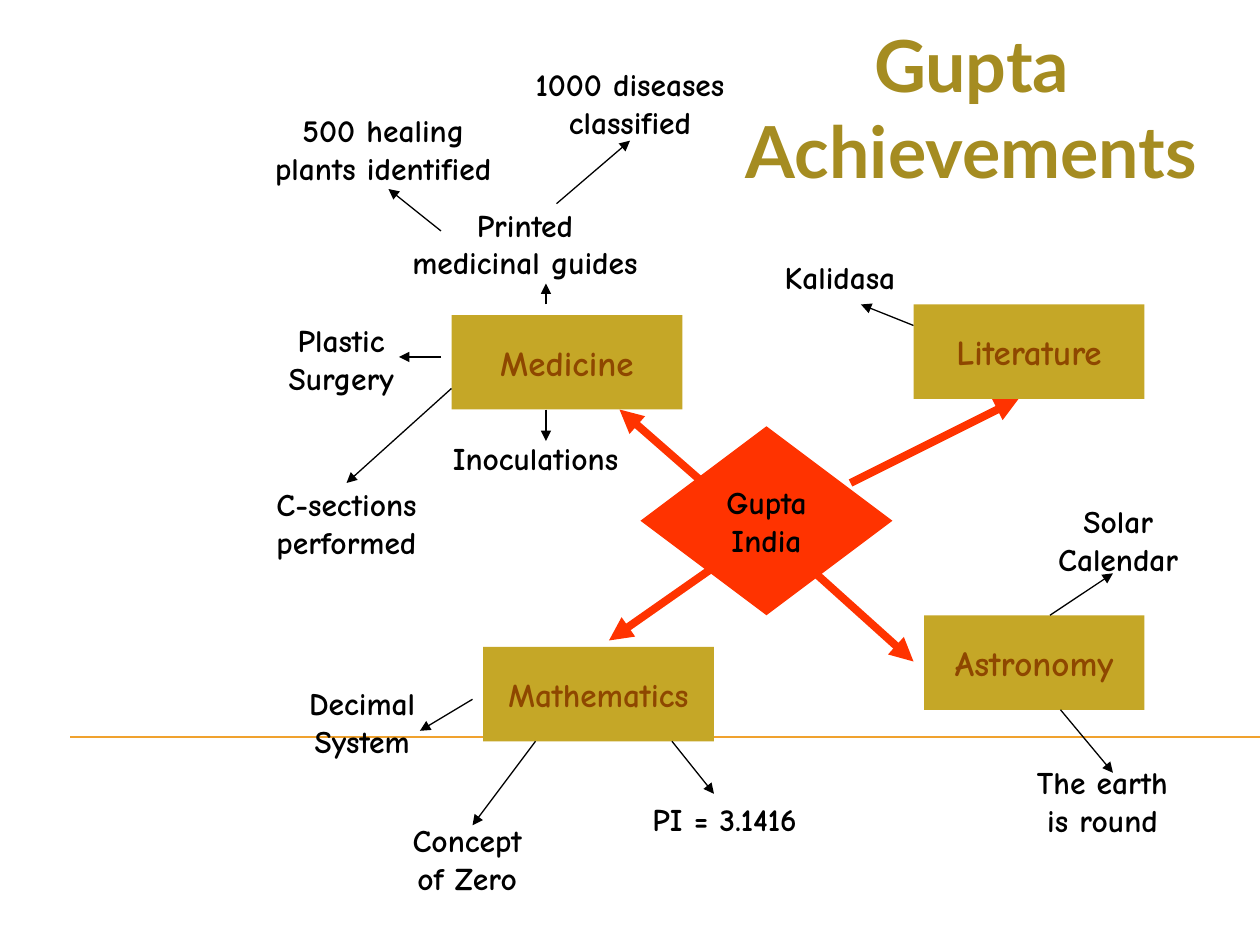
from pptx import Presentation
from pptx.dml.color import RGBColor
from pptx.enum.shapes import MSO_CONNECTOR as Link, MSO_SHAPE as Preset
from pptx.enum.text import MSO_ANCHOR as Anchor, MSO_AUTO_SIZE as Fit, PP_ALIGN as Align
from pptx.oxml.ns import qn
from pptx.util import Inches, Pt
from lxml.etree import SubElement

COLORS = {"gold": "C5A727", "brown": "8E4700", "red": "FF3300",
          "black": "000000", "title": "A58C21", "rule": "F0A22E"}

deck = Presentation()
deck.slide_width, deck.slide_height = Inches(10), Inches(7.5)
page = deck.slides.add_slide(deck.slide_layouts[5])

# The slide is a grid of 120 columns by 90 rows
COLUMN, ROW = deck.slide_width / 120, deck.slide_height / 90


def write(shape, text, color, size, font="Comic Neue", wrap=True, anchor=Anchor.TOP):
    """Put centred bold text in a shape and return its run."""
    frame = shape.text_frame
    frame_format = {"word_wrap": wrap, "vertical_anchor": anchor, "auto_size": Fit.NONE}
    for name, value in frame_format.items():
        setattr(frame, name, value)
    para = frame.paragraphs[0]
    para.text = text
    para.alignment = Align.CENTER
    span_format = {"name": font, "size": Pt(size), "bold": True,
                   "color": RGBColor.from_string(COLORS[color])}
    for span in para.runs:
        for name, value in span_format.items():
            if name == "color":
                span.font.color.rgb = value
            else:
                setattr(span.font, name, value)
    return para.runs[0]


def connect(start_x, start_y, end_x, end_y, color="black", width=0.75, arrow=True):
    """Draw a line between two grid points, with a head at its end."""
    line = page.shapes.add_connector(
        Link.STRAIGHT, int(start_x * COLUMN), int(start_y * ROW),
        int(end_x * COLUMN), int(end_y * ROW))
    line.line.color.rgb = RGBColor.from_string(COLORS[color])
    line.line.width = Pt(width)
    properties = line._element.spPr
    if arrow:
        SubElement(properties.find(qn("a:ln")), qn("a:tailEnd"), type="triangle")
    SubElement(properties, qn("a:effectLst"))


# Title with a hard black text shadow
title = page.shapes.title
title_place = {"left": 67, "top": 1.4, "width": 51.1, "height": 17.8}
for side, cells in title_place.items():
    setattr(title, side, int(cells * (COLUMN if side in ("left", "width") else ROW)))
title_span = write(title, "Gupta Achievements", "title", 41, "Lato")
effects = SubElement(title_span.font._element, qn("a:effectLst"))
shadow = SubElement(effects, qn("a:outerShdw"), dist="35921", dir="2700000")
SubElement(shadow, qn("a:srgbClr"), val=COLORS["black"])
# Effects must come between the fill and the typeface
title_span.font._element.find(qn("a:solidFill")).addnext(effects)

# Horizontal rule
connect(6.7, 70.2, 120, 70.2, "rule", arrow=False)

# Red arrows from the centre to each field
for ends in [(67, 46, 59, 39), (81, 46, 97, 38), (77, 54, 87, 63), (68, 54, 58, 61)]:
    connect(*ends, "red", 4.5)

# Fields and the central diamond: text, preset, left, top, width, height, fill, font
nodes = [
    ("Medicine", Preset.RECTANGLE, 43, 30, 22, 9, "gold", "brown", 20),
    ("Literature", Preset.RECTANGLE, 87, 29, 22, 9, "gold", "brown", 20),
    ("Mathematics", Preset.RECTANGLE, 46, 61.6, 22, 9, "gold", "brown", 19),
    ("Astronomy", Preset.RECTANGLE, 88, 58.6, 21, 9, "gold", "brown", 20),
    ("Gupta\vIndia", Preset.DIAMOND, 61, 40.6, 24, 18, "red", "black", 18),
]
for text, preset, left, top, width, height, fill, color, size in nodes:
    box = page.shapes.add_shape(preset, int(left * COLUMN), int(top * ROW),
                                int(width * COLUMN), int(height * ROW))
    box.shadow.inherit = False
    box.fill.solid()
    box.fill.fore_color.rgb = RGBColor.from_string(COLORS[fill])
    box.line.fill.background()
    write(box, text, color, size, wrap=False, anchor=Anchor.MIDDLE)

# Achievements: text, left, top, width
labels = [
    ("Printed\vmedicinal guides", 35, 19, 30),
    ("1000 diseases\vclassified", 47, 5.6, 26),
    ("Plastic\vSurgery", 24, 30, 17),
    ("C-sections\vperformed", 23, 45.6, 20),
    ("Inoculations", 41, 41.2, 20),
    ("500 healing\vplants identified", 23, 10, 27),
    ("Decimal\vSystem", 26, 64.6, 17),
    ("Concept\vof Zero", 36, 77.6, 17),
    ("PI = 3.1416", 58, 75.6, 22),
    ("Kalidasa", 72, 24, 16),
    ("Solar\vCalendar", 95, 47.2, 23),
    ("The earth\vis round", 96, 72.1, 18),
]
for text, left, top, width in labels:
    height = 4.8 + 3.6 * text.count("\v")
    box = page.shapes.add_textbox(int(left * COLUMN), int(top * ROW),
                                  int(width * COLUMN), int(height * ROW))
    write(box, text, "black", 18)

# Thin arrows from the fields to their achievements
for ends in [
    (52, 29, 52, 27), (42, 22, 37, 18), (53, 19.4, 60, 13.4),    # medicine, upper
    (42, 34, 38, 34), (52, 39, 52, 42), (43, 37, 33, 46),        # medicine, lower
    (87, 31, 82, 29),                                            # literature
    (100, 58.6, 106, 54.6), (101, 67.6, 106, 73.6),              # astronomy
    (45, 66.6, 40, 69.6), (51, 70.6, 45, 78.6), (64, 70.6, 68, 75.6),  # mathematics
]:
    connect(*ends)

deck.save("out.pptx")
